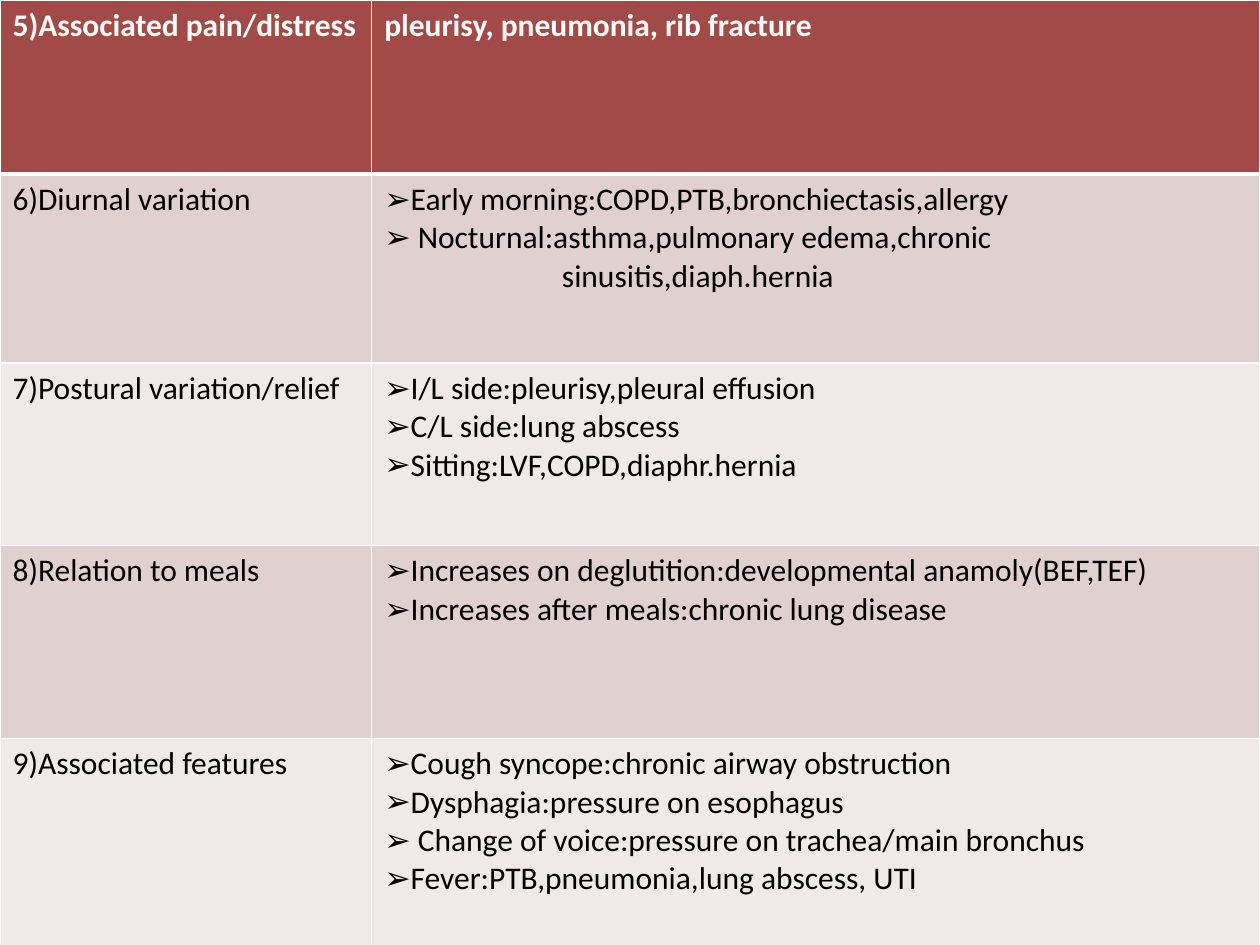
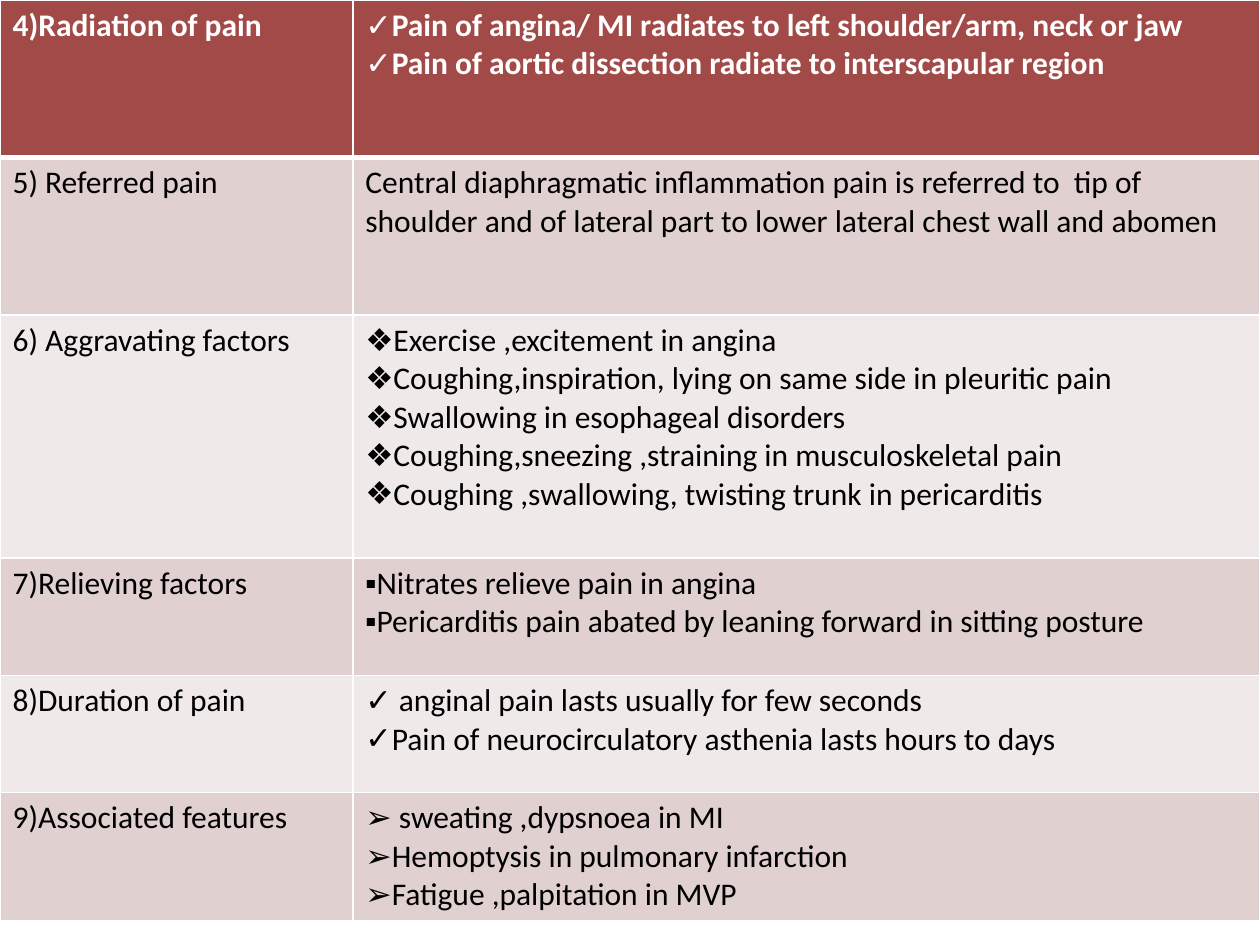
from dataclasses import dataclass

from lxml import etree
from pptx import Presentation, util as u
from pptx.dml.color import RGBColor
from pptx.oxml import ns

# Shared look
FONT = "Calibri"
WHITE, BLACK, HEADER = "FFFFFF", "000000", "A24A48"
BANDS = ("F0E9E9", "E0D0CF")
BODY_FORMAT = {"name": FONT, "size": u.Pt(18), "bold": False}
HEADER_FORMAT = {**BODY_FORMAT, "bold": True}
THIN, THICK = u.Pt(1), u.Pt(3)
CONTINUATION_INDENT = u.Inches(1.41)
ARROW, CHECK, DIAMOND, SQUARE = "➢", "✓", "❖", "▪"


@dataclass
class Finding:
    """One table row: a symptom aspect and what it points to."""
    height: float
    aspect: str
    bullet: str
    lines: tuple
    continuation: str = ""


COUGH_FINDINGS = (
    Finding(1.38, "5)Associated pain/distress", "",
            ("pleurisy, pneumonia, rib fracture",)),
    Finding(1.5, "6)Diurnal variation", ARROW,
            ("Early morning:COPD,PTB,bronchiectasis,allergy",
             " Nocturnal:asthma,pulmonary edema,chronic"),
            continuation="sinusitis,diaph.hernia"),
    Finding(1.45, "7)Postural variation/relief", ARROW,
            ("I/L side:pleurisy,pleural effusion",
             "C/L side:lung abscess",
             "Sitting:LVF,COPD,diaphr.hernia")),
    Finding(1.53, "8)Relation to meals", ARROW,
            ("Increases on deglutition:developmental anamoly(BEF,TEF)",
             "Increases after meals:chronic lung disease")),
    Finding(2.2, "9)Associated features", ARROW,
            ("Cough syncope:chronic airway obstruction",
             "Dysphagia:pressure on esophagus",
             " Change of voice:pressure on trachea/main bronchus",
             "Fever:PTB,pneumonia,lung abscess, UTI")),
)

CHEST_PAIN_FINDINGS = (
    Finding(1.25, "4)Radiation of pain", CHECK,
            ("Pain of angina/ MI radiates to left shoulder/arm, neck or jaw",
             "Pain of aortic dissection radiate to interscapular region")),
    Finding(1.25, "5) Referred pain", "",
            ("Central diaphragmatic inflammation pain is referred to  tip of "
             "shoulder and of lateral part to lower lateral chest wall and abomen",)),
    Finding(1.93, "6) Aggravating factors", DIAMOND,
            ("Exercise ,excitement in angina",
             "Coughing,inspiration, lying on same side in pleuritic pain",
             "Swallowing in esophageal disorders",
             "Coughing,sneezing ,straining in musculoskeletal pain",
             "Coughing ,swallowing, twisting trunk in pericarditis")),
    Finding(0.93, "7)Relieving factors", SQUARE,
            ("Nitrates relieve pain in angina",
             "Pericarditis pain abated by leaning forward in sitting posture")),
    Finding(0.93, "8)Duration of pain", CHECK,
            (" anginal pain lasts usually for few seconds",
             "Pain of neurocirculatory asthenia lasts hours to days")),
    Finding(1.02, "9)Associated features", ARROW,
            (" sweating ,dypsnoea in MI",
             "Hemoptysis in pulmonary infarction",
             "Fatigue ,palpitation in MVP")),
)


def color(hex_value):
    return RGBColor.from_string(hex_value)


def add_border(cell, side, width):
    properties = cell._tc.get_or_add_tcPr()
    line = etree.SubElement(properties, ns.qn(f"a:ln{side}"), w=str(width))
    fill = etree.SubElement(line, ns.qn("a:solidFill"))
    etree.SubElement(fill, ns.qn("a:srgbClr"), val=WHITE)


def style_cell(cell, row_index):
    """Draw the white grid, heavier under the header, then the band colour."""
    widths = {"L": THIN, "R": THIN,
              "T": THICK if row_index == 1 else THIN,
              "B": THICK if row_index == 0 else THIN}
    for side, width in widths.items():
        add_border(cell, side, width)
    cell.fill.solid()
    cell.fill.fore_color.rgb = color(BANDS[row_index % 2] if row_index else HEADER)


def format_paragraph(paragraph, is_header, bullet="", indent=0):
    properties = paragraph._p.get_or_add_pPr()
    properties.set("marL", str(indent))
    properties.set("indent", "0")
    if bullet:
        etree.SubElement(properties, ns.qn("a:buFont"), typeface=FONT)
        etree.SubElement(properties, ns.qn("a:buChar"), char=bullet)
    for run in paragraph.runs:
        for name, value in (HEADER_FORMAT if is_header else BODY_FORMAT).items():
            setattr(run.font, name, value)
        run.font.color.rgb = color(WHITE if is_header else BLACK)


def fill_cell(cell, lines, row_index, bullet="", continuation=""):
    style_cell(cell, row_index)
    frame = cell.text_frame
    frame.text = "\n".join(lines)
    for paragraph in frame.paragraphs:
        format_paragraph(paragraph, row_index == 0, bullet)
    if continuation:
        paragraph = frame.add_paragraph()
        paragraph.text = continuation
        format_paragraph(paragraph, row_index == 0, indent=CONTINUATION_INDENT)


def add_findings_slide(presentation, findings, aspect_width):
    slide = presentation.slides.add_slide(presentation.slide_layouts[6])
    height = u.Inches(sum(finding.height for finding in findings))
    shape = slide.shapes.add_table(len(findings), 2, 0, 0,
                                   presentation.slide_width, height)
    table = shape.table
    table.columns[0].width = u.Inches(aspect_width)
    table.columns[1].width = presentation.slide_width - u.Inches(aspect_width)
    for index, finding in enumerate(findings):
        table.rows[index].height = u.Inches(finding.height)
        fill_cell(table.cell(index, 0), (finding.aspect,), index)
        fill_cell(table.cell(index, 1), finding.lines, index,
                  finding.bullet, finding.continuation)


def main():
    presentation = Presentation()
    presentation.slide_width = u.Inches(10)
    presentation.slide_height = u.Inches(7.5)
    add_findings_slide(presentation, COUGH_FINDINGS, aspect_width=2.95)
    add_findings_slide(presentation, CHEST_PAIN_FINDINGS, aspect_width=2.8)
    presentation.save("out.pptx")


if __name__ == "__main__":
    main()
